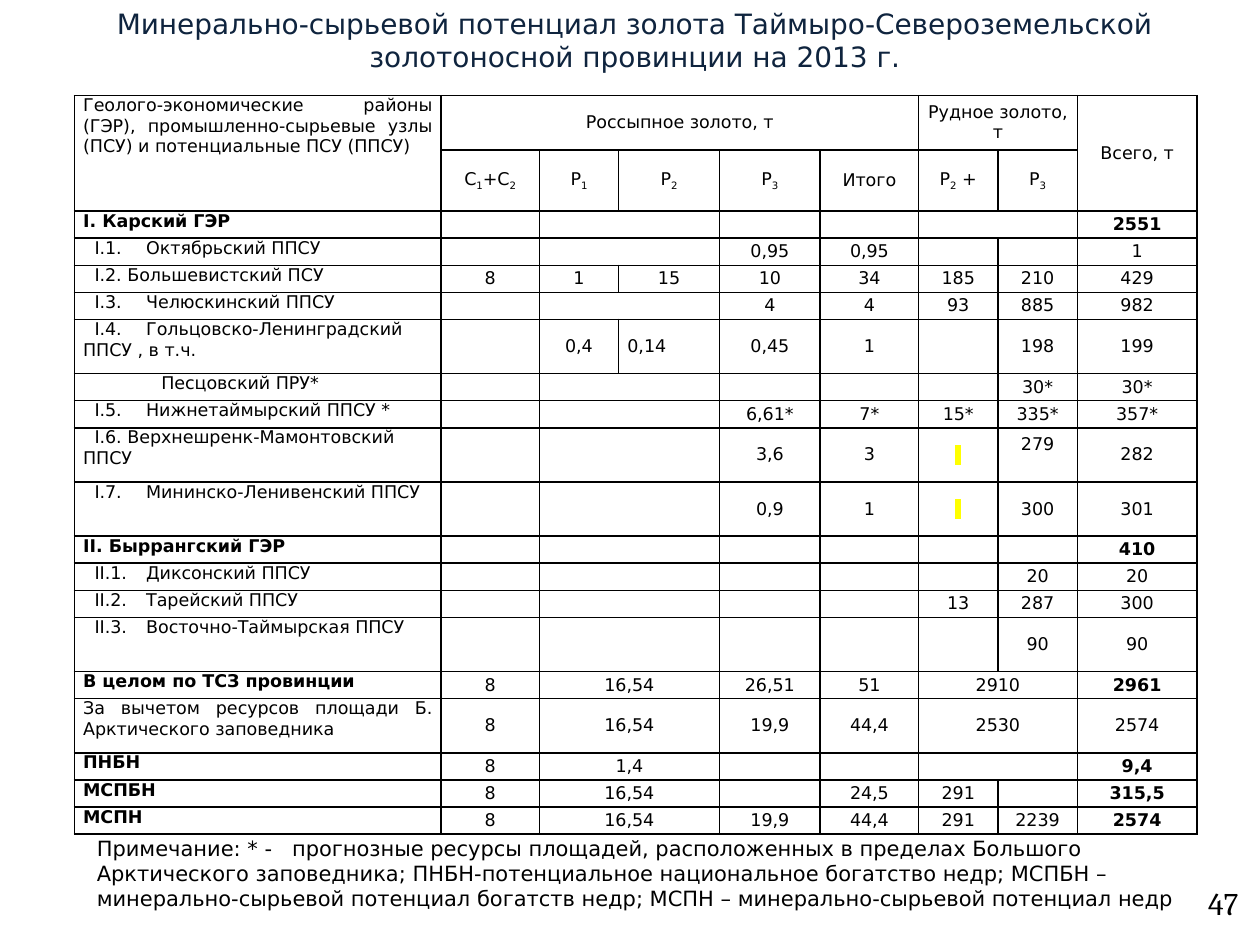
from dataclasses import dataclass

from lxml import etree
from pptx import Presentation
from pptx import util as u
from pptx.dml.color import RGBColor
from pptx.enum import text as t
from pptx.oxml.ns import qn


@dataclass(frozen=True)
class Theme:
    font: str = "DejaVu Sans"
    number_font: str = "Cambria"
    ink: str = "000000"
    title_ink: str = "0F243E"
    marker: str = "FFFF00"
    cell_size: int = 10
    note_size: int = 12
    title_size: int = 16
    number_size: int = 18
    border: int = 1


THEME = Theme()
ALIGN = t.PP_ALIGN
SINGLE_ROW = 0.215
COLUMN_WIDTHS = [2.91, 0.78, 0.63, 0.8, 0.8, 0.78, 0.63, 0.63, 0.95]
TALL_ROWS = {0, 6, 9, 10, 14, 16}
SUBHEAD_ROW, SUBHEAD_HEIGHT = 1, 0.48
JUSTIFIED_ROWS = {0, 2, 3, 4, 16, 17, 18, 19}
BOLD_ROWS = {2, 11, 15, 17, 18, 19}
DISTRICT_INDENT, SUBDISTRICT_INDENT = 0.09, 0.62
MARKED_CELLS = {(9, 6), (10, 6)}
LEFT_VALUE, RAISED_VALUE = (6, 3), (9, 7)

# "<" extends the cell on the left, "^" the cell above, "_" lowers the next character.
ROWS = [row.split("|") for row in (
    "Геолого-экономические районы (ГЭР), промышленно-сырьевые узлы (ПСУ) и потенциальные ПСУ (ППСУ)"
    "|Россыпное золото, т|<|<|<|<|Рудное золото, т|<|Всего, т",
    "^|C_1+C_2|P_1|P_2|P_3|Итого|Р_2 +|P_3|^",
    "I. Карский ГЭР|||<||||<|2551",
    "I.1.\tОктябрьский ППСУ|||<|0,95|0,95|||1",
    "I.2. Большевистский ПСУ|8|1|15|10|34|185|210|429",
    "I.3.\tЧелюскинский ППСУ|||<|4|4|93|885|982",
    "I.4.\tГольцовско-Ленинградский ППСУ , в т.ч.||0,4|0,14|0,45|1||198|199",
    "Песцовский ПРУ*|||<||||30*|30*",
    "I.5.\tНижнетаймырский ППСУ *|||<|6,61*|7*|15*|335*|357*",
    "I.6. Верхнешренк-Мамонтовский ППСУ|||<|3,6|3|\u00a0|279|282",
    "I.7.\tМининско-Ленивенский ППСУ|||<|0,9|1|\u00a0|300|301",
    "II. Быррангский ГЭР|||<|||||410",
    "II.1.\tДиксонский ППСУ|||<||||20|20",
    "II.2.\tТарейский ППСУ|||<|||13|287|300",
    "II.3.\tВосточно-Таймырская ППСУ|||<||||90|90",
    "В целом по ТСЗ провинции|8|16,54|<|26,51|51|2910|<|2961",
    "За вычетом ресурсов площади Б. Арктического заповедника|8|16,54|<|19,9|44,4|2530|<|2574",
    "ПНБН|8|1,4|<||||<|9,4",
    "МСПБН|8|16,54|<||24,5|291||315,5",
    "МСПН|8|16,54|<|19,9|44,4|291|2239|2574",
)]

NOTE = ("Примечание: * -\tпрогнозные ресурсы площадей, расположенных в пределах Большого Арктического "
        "заповедника; ПНБН-потенциальное национальное богатство недр; МСПБН – минерально-сырьевой "
        "потенциал богатств недр; МСПН – минерально-сырьевой потенциал недр")
TITLE = "Минерально-сырьевой потенциал золота Таймыро-Североземельской золотоносной провинции на 2013 г."


def add_span(para, words, size, color, font, bold, lowered, marker):
    span = para.add_run()
    span.text = words
    span.font.size = u.Pt(size)
    span.font.bold = bold
    span.font.color.rgb = RGBColor.from_string(color)
    if marker:
        highlight = etree.SubElement(span.font._element, qn("a:highlight"))
        etree.SubElement(highlight, qn("a:srgbClr"), val=marker)
    span.font.name = font
    if lowered:
        span.font._element.set("baseline", "-25000")


def write(frame, words, size=THEME.cell_size, color=THEME.ink, font=THEME.font,
          align=ALIGN.LEFT, bold=False, indent=0, tab=None, marker=None):
    para = frame.paragraphs[0]
    para.alignment = align
    properties = para._p.get_or_add_pPr()
    if indent:
        properties.set("marL", "0")
        properties.set("indent", str(u.Inches(indent)))
    if tab:
        stops = etree.SubElement(properties, qn("a:tabLst"))
        etree.SubElement(stops, qn("a:tab"), pos=str(u.Inches(tab)), algn="l")
    if not words:
        etree.SubElement(para._p, qn("a:endParaRPr"), sz=str(size * 100))
    first, *others = words.split("_")
    pieces = [(first, False)]
    for other in others:
        pieces += [(other[0], True), (other[1:], False)]
    for piece, lowered in pieces:
        if piece:
            add_span(para, piece, size, color, font, bold, lowered, marker)


def add_label(page, words, left, top, width, height, wrap=True, **style):
    box = page.shapes.add_textbox(*map(u.Inches, (left, top, width, height)))
    box.text_frame.word_wrap = wrap
    box.text_frame.auto_size = t.MSO_AUTO_SIZE.SHAPE_TO_FIT_TEXT
    write(box.text_frame, words, **style)


def style_cell(cell):
    cell.margin_left = cell.margin_right = u.Inches(0.07)
    cell.margin_top = cell.margin_bottom = 0
    properties = cell._tc.get_or_add_tcPr()
    for side in ("lnL", "lnR", "lnT", "lnB"):
        line = etree.SubElement(properties, qn(f"a:{side}"), w=str(u.Pt(THEME.border)))
        fill = etree.SubElement(line, qn("a:solidFill"))
        etree.SubElement(fill, qn("a:srgbClr"), val=THEME.ink)
    cell.fill.background()


def name_style(row, words):
    style = {"align": ALIGN.JUSTIFY if row in JUSTIFIED_ROWS else ALIGN.LEFT}
    if words.startswith(("I.", "II.")) and row not in BOLD_ROWS:
        style["indent"] = DISTRICT_INDENT
    elif words.startswith("Песцовский"):
        style["indent"] = SUBDISTRICT_INDENT
    if "\t" in words:
        style["tab"] = 0.48 if words.startswith("II.") else 0.39
    return style


def value_style(place):
    return {"align": ALIGN.LEFT if place == LEFT_VALUE else ALIGN.CENTER,
            "marker": THEME.marker if place in MARKED_CELLS else None}


def merge_cells(table):
    for row, words in enumerate(ROWS):
        for column, word in enumerate(words):
            if word == "^":
                table.cell(row - 1, column).merge(table.cell(row, column))
            elif word != "<" and words[column + 1:column + 2] == ["<"]:
                end = column + 1
                while words[end + 1:end + 2] == ["<"]:
                    end += 1
                table.cell(row, column).merge(table.cell(row, end))


def row_height(row):
    if row == SUBHEAD_ROW:
        return SUBHEAD_HEIGHT
    return SINGLE_ROW * (2 if row in TALL_ROWS else 1)


def add_resource_table(page):
    heights = [row_height(row) for row in range(len(ROWS))]
    table = page.shapes.add_table(
        len(ROWS), len(COLUMN_WIDTHS), u.Inches(0.59), u.Inches(0.76),
        u.Inches(sum(COLUMN_WIDTHS)), u.Inches(sum(heights))).table
    table.first_row = table.horz_banding = False
    for column, width in zip(table.columns, COLUMN_WIDTHS):
        column.width = u.Inches(width)
    for table_row, height in zip(table.rows, heights):
        table_row.height = u.Inches(height)
    last = len(COLUMN_WIDTHS) - 1
    for row, words in enumerate(ROWS):
        for column, word in enumerate(words):
            cell = table.cell(row, column)
            style_cell(cell)
            if column:
                cell.vertical_anchor = t.MSO_ANCHOR.MIDDLE
            style = value_style((row, column)) if column else name_style(row, word)
            bold = row in BOLD_ROWS and column in (0, last)
            write(cell.text_frame, "" if word in "<^" else word, bold=bold, **style)
    table.cell(*RAISED_VALUE).margin_bottom = u.Inches(0.16)
    merge_cells(table)


def main():
    deck = Presentation()
    deck.slide_width, deck.slide_height = u.Inches(10), u.Inches(7.5)
    page = deck.slides.add_slide(deck.slide_layouts[6])
    add_resource_table(page)
    add_label(page, NOTE, 0.67, 6.58, 8.9, 0.71, size=THEME.note_size, tab=1.55)
    add_label(page, TITLE, 0.59, 0, 8.9, 0.64, size=THEME.title_size,
              color=THEME.title_ink, align=ALIGN.CENTER)
    add_label(page, "47", 9.49, 6.97, 0.45, 0.4, wrap=False,
              size=THEME.number_size, font=THEME.number_font)
    deck.save("out.pptx")


if __name__ == "__main__":
    main()
